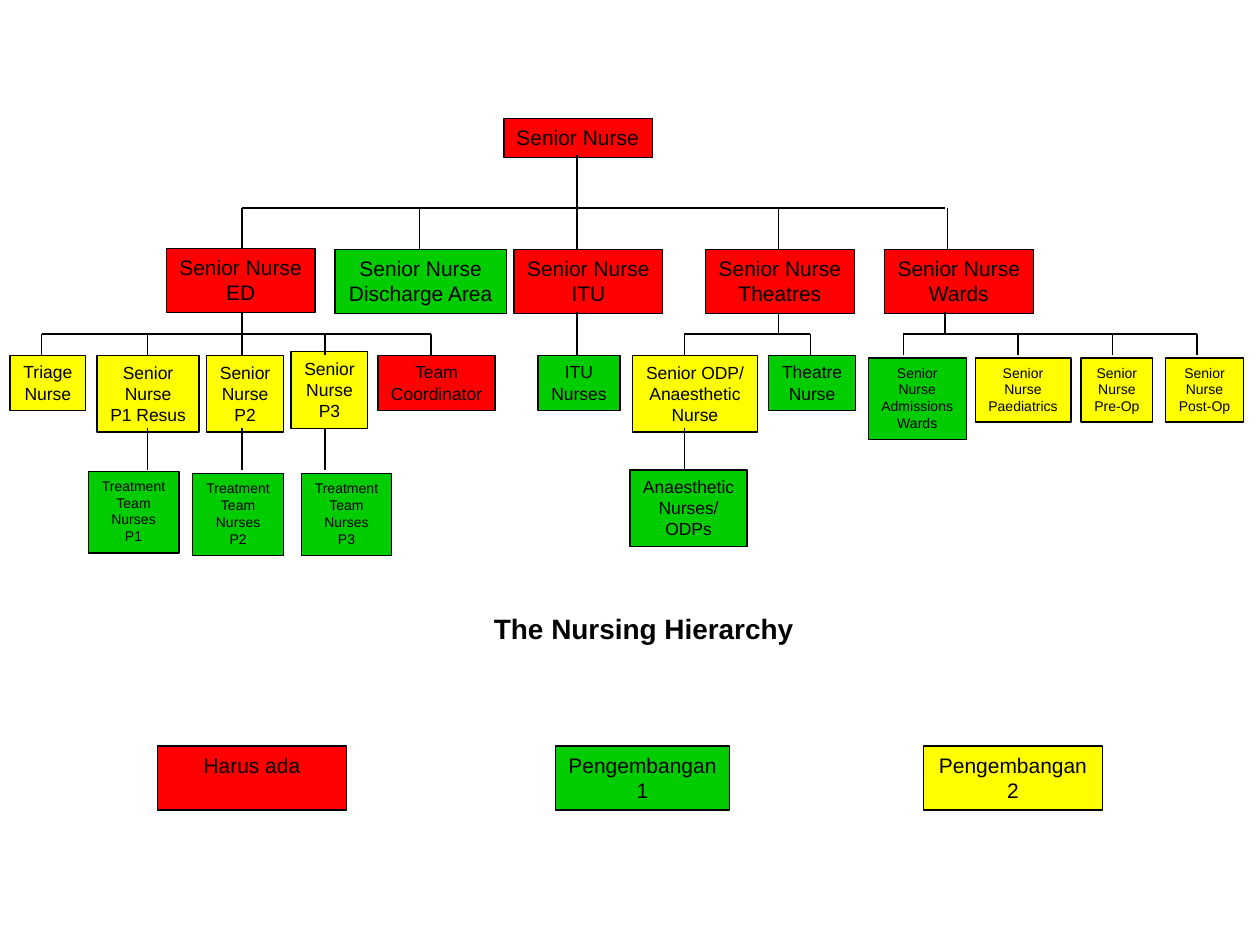
from dataclasses import dataclass

from lxml.etree import SubElement
from pptx import Presentation
from pptx.dml.color import RGBColor as Rgb
from pptx.enum.shapes import MSO_CONNECTOR as Link, MSO_SHAPE as Preset
from pptx.enum.text import MSO_ANCHOR as Anchor, MSO_AUTO_SIZE as Fit, PP_ALIGN as Align
from pptx.oxml.ns import qn
from pptx.util import Emu, Pt

SCALE = 9144  # EMU in one px, at 100 px to the inch
COLORS = {"must": "FF0000", "first": "00CC00", "second": "FFFF00", "ink": "000000"}


@dataclass
class Box:
    text: str
    left: int
    top: int
    width: int
    height: int
    color: str
    size: int
    align: Align = Align.CENTER
    wrap: bool = False


@dataclass
class Branch:
    """A trunk from top to foot, a bar from left to right, and drops below it."""
    trunk: int
    top: int
    foot: int
    bar: int
    left: int
    right: int
    drops: tuple[int, ...]
    end: int


def px(count: int) -> Emu:
    return Emu(count * SCALE)


def tint(name: str) -> Rgb:
    return Rgb.from_string(COLORS[name])


def place(shape, left: int, top: int, width: int, height: int) -> None:
    for name, value in dict(left=left, top=top, width=width, height=height).items():
        setattr(shape, name, px(value))


def write(frame, text: str, size: int, align: Align, wrap: bool = False, bold: bool = False) -> None:
    frame.text = text
    look = {"auto_size": Fit.SHAPE_TO_FIT_TEXT, "word_wrap": wrap,
            "vertical_anchor": Anchor.TOP}
    for name, value in look.items():
        setattr(frame, name, value)
    for para in frame.paragraphs:
        para.alignment = align
        for run in para.runs:
            for name, value in {"name": "Arial", "size": Pt(size), "bold": bold}.items():
                setattr(run.font, name, value)
            run.font.color.rgb = tint("ink")


def ink(line) -> None:
    line.color.rgb = tint("ink")
    line.width = Pt(0.75)


def draw_box(slide, box: Box) -> None:
    area = map(px, (box.left, box.top, box.width, box.height))
    shape = slide.shapes.add_shape(Preset.RECTANGLE, *area)
    shape.shadow.inherit = False
    shape.fill.solid()
    shape.fill.fore_color.rgb = tint(box.color)
    ink(shape.line)
    write(shape.text_frame, box.text, box.size, box.align, box.wrap)


def draw_line(slide, *ends: int) -> None:
    line = slide.shapes.add_connector(Link.STRAIGHT, *map(px, ends))
    ink(line.line)
    SubElement(line._element.spPr, qn("a:effectLst"))


def draw_branch(slide, part: Branch) -> None:
    draw_line(slide, part.trunk, part.top, part.trunk, part.foot)
    draw_line(slide, part.left, part.bar, part.right, part.bar)
    for x in part.drops:
        draw_line(slide, x, part.bar, x, part.end)


BOXES = [
    Box("Senior Nurse", 400, 94, 118, 31, "must", 12, Align.LEFT),

    Box("Senior Nurse\nED", 132, 197, 118, 51, "must", 12),
    Box("Senior Nurse\nDischarge Area", 266, 198, 136, 51, "first", 12),
    Box("Senior Nurse\nITU", 408, 198, 118, 51, "must", 12),
    Box("Senior Nurse\nTheatres", 560, 198, 118, 51, "must", 12),
    Box("Senior Nurse\nWards", 702, 198, 118, 51, "must", 12),

    Box("Triage\nNurse", 8, 282, 60, 44, "second", 10),
    Box("Senior\nNurse\nP1 Resus", 77, 282, 81, 61, "second", 10),
    Box("Senior\nNurse\nP2", 164, 282, 61, 61, "second", 10),
    Box("Senior\nNurse\nP3", 231, 279, 61, 61, "second", 10),
    Box("Team\nCoordinator", 300, 282, 93, 44, "must", 10),
    Box("ITU\nNurses", 427, 282, 65, 44, "first", 10),
    Box("Senior ODP/\nAnaesthetic\nNurse", 502, 282, 99, 61, "second", 10),
    Box("Theatre\nNurse", 610, 282, 69, 44, "first", 10),
    Box("Senior\nNurse\nAdmissions\nWards", 689, 284, 78, 65, "first", 8),
    Box("Senior\nNurse\nPaediatrics", 774, 284, 76, 51, "second", 8),
    Box("Senior\nNurse\nPre-Op", 858, 284, 57, 51, "second", 8),
    Box("Senior\nNurse\nPost-Op", 925, 284, 62, 51, "second", 8),

    Box("Treatment\nTeam\nNurses\nP1", 70, 374, 72, 65, "first", 8),
    Box("Treatment\nTeam\nNurses\nP2", 153, 376, 72, 65, "first", 8),
    Box("Treatment\nTeam\nNurses\nP3", 239, 376, 72, 65, "first", 8),
    Box("Anaesthetic\nNurses/\nODPs", 500, 373, 93, 61, "first", 10),

    Box("Harus ada", 125, 592, 150, 51, "must", 12, wrap=True),
    Box("Pengembangan\n1", 441, 592, 138, 51, "first", 12),
    Box("Pengembangan 2", 733, 592, 142, 51, "second", 12, wrap=True),
]
BRANCHES = [
    Branch(458, 123, 165, 165, 192, 750, (192, 333, 458, 618, 752), 198),
    Branch(192, 248, 282, 265, 33, 342, (33, 117, 258, 342), 282),
    Branch(618, 248, 265, 265, 543, 643, (543, 643), 282),
    Branch(750, 248, 265, 265, 717, 950, (717, 808, 883, 950), 282),
]
STEMS = [(458, 248, 282)] + [(x, 340, 373) for x in (117, 192, 258, 543)]


def main() -> None:
    deck = Presentation()
    deck.slide_width, deck.slide_height = px(1000), px(750)
    slide = deck.slides.add_slide(deck.slide_layouts[5])
    title = slide.shapes.title
    place(title, 382, 480, 258, 37)
    write(title.text_frame, "The Nursing Hierarchy", 16, Align.LEFT, bold=True)
    for box in BOXES:
        draw_box(slide, box)
    for part in BRANCHES:
        draw_branch(slide, part)
    for x, top, end in STEMS:
        draw_line(slide, x, top, x, end)
    deck.save("out.pptx")


if __name__ == "__main__":
    main()
